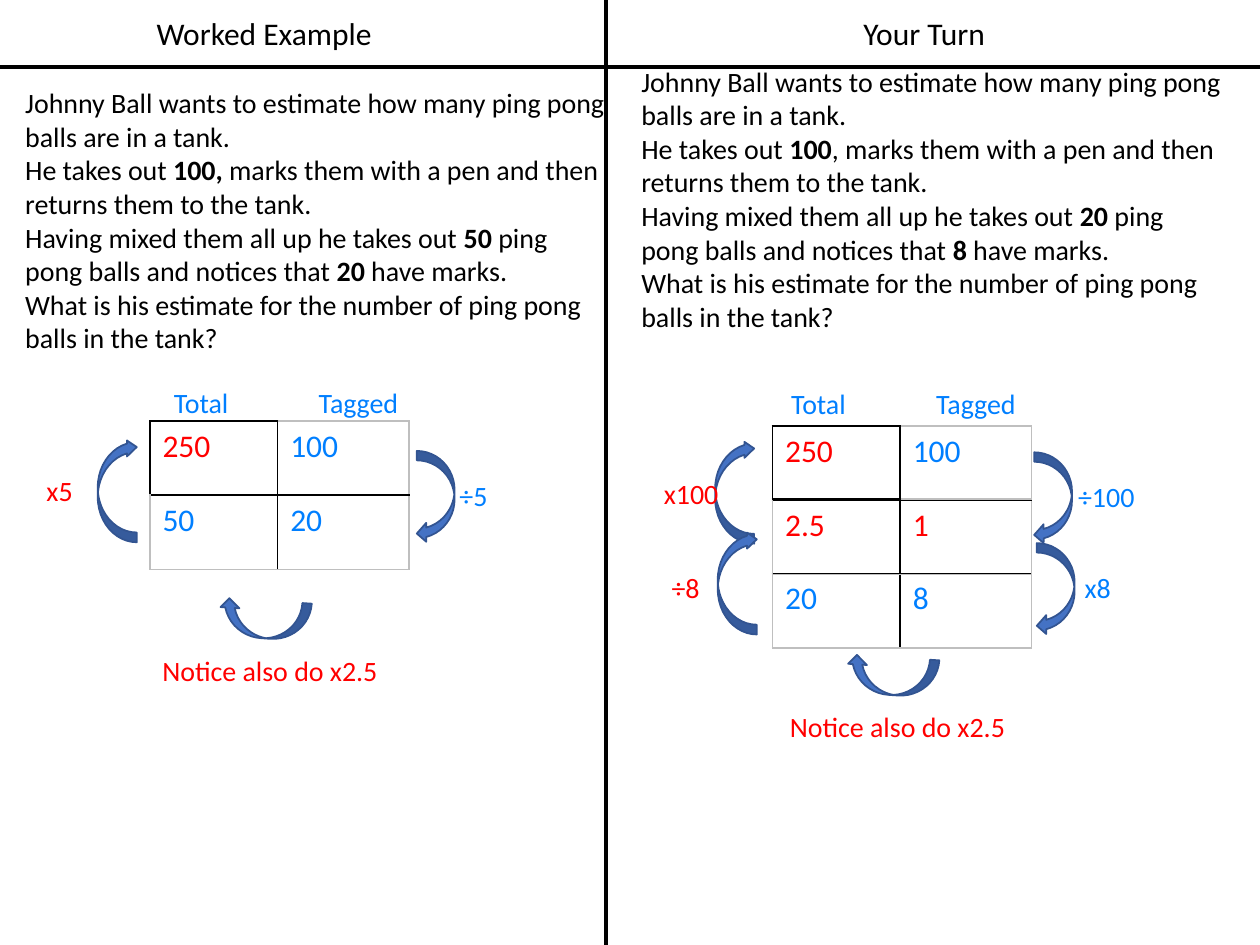
from lxml.etree import SubElement
from pptx import Presentation
from pptx.dml.color import RGBColor
from pptx.enum.shapes import MSO_CONNECTOR, MSO_SHAPE
from pptx.enum.text import MSO_ANCHOR, MSO_AUTO_SIZE, PP_ALIGN
from pptx.oxml import parse_xml
from pptx.oxml.ns import nsdecls, qn
from pptx.util import Pt

COLORS = {
    "ink": "000000", "answer": "FF0000", "given": "007FFF",
    "arrow": "4472C4", "arrow_edge": "325491", "outer_border": "BFBFBF",
}
WIDTH, HEIGHT = 720, 540
DIVIDER_X, RULE_Y = 346.3, 38.2


def rgb(name):
    return RGBColor.from_string(COLORS[name])


def style(run, size, color, bold=False):
    run.font.name = "Calibri"
    run.font.size = Pt(size)
    run.font.bold = bold
    run.font.color.rgb = rgb(color)


def place(shape, left, top, width, height):
    shape.left, shape.top = Pt(left), Pt(top)
    shape.width, shape.height = Pt(width), Pt(height)


def add_rule(slide, x1, y1, x2, y2):
    rule = slide.shapes.add_connector(
        MSO_CONNECTOR.STRAIGHT, Pt(x1), Pt(y1), Pt(x2), Pt(y2))
    rule.line.color.rgb = rgb("ink")
    rule.line.width = Pt(2.5)
    SubElement(rule._element.spPr, qn("a:effectLst"))


def add_label(slide, left, top, width, wording, color):
    label = slide.shapes.add_textbox(Pt(left), Pt(top), Pt(width), Pt(26.6))
    label.text_frame.word_wrap = True
    label.text_frame.text = wording
    style(label.text_frame.paragraphs[0].runs[0], 16, color)


def add_arrow(slide, preset, left, top, width, height, rotation=0):
    arrow = slide.shapes.add_shape(
        preset, Pt(left), Pt(top), Pt(width), Pt(height))
    arrow.rotation = rotation
    arrow.shadow.inherit = False
    arrow.fill.solid()
    arrow.fill.fore_color.rgb = rgb("arrow")
    arrow.line.color.rgb = rgb("arrow_edge")
    arrow.line.width = Pt(1)
    return arrow


def fill_placeholder(placeholder, box, paragraphs, size, align):
    """Each paragraph is a list of strings; every second one is bold."""
    place(placeholder, *box)
    frame = placeholder.text_frame
    frame.word_wrap = True
    frame.auto_size = MSO_AUTO_SIZE.NONE
    frame.vertical_anchor = MSO_ANCHOR.TOP
    for index, pieces in enumerate(paragraphs):
        paragraph = frame.add_paragraph() if index else frame.paragraphs[0]
        paragraph.alignment = align
        paragraph.space_before = Pt(0)
        properties = paragraph._p.get_or_add_pPr()
        properties.set("marL", "0")
        properties.set("indent", "0")
        SubElement(properties, qn("a:buNone"))
        for position, piece in enumerate(pieces):
            run = paragraph.add_run()
            run.text = piece
            style(run, size, "ink", bold=position % 2 == 1)


def add_question(slide, heading_id, heading, heading_left, left, top,
                 marked, sample, tagged):
    """Heading and word problem of one half."""
    fill_placeholder(slide.placeholders[heading_id],
                     (heading_left, 4.3, 139, 29), [[heading]], 18, PP_ALIGN.CENTER)
    problem = [
        ["Johnny Ball wants to estimate how many ping pong balls are in a tank."],
        ["He takes out ", *marked, " marks them with a pen and then returns them to the tank."]
        if len(marked) == 1 else
        ["He takes out ", marked[0], marked[1] + " marks them with a pen and then returns them to the tank."],
        ["Having mixed them all up he takes out ", sample,
         " ping pong balls and notices that ", tagged, " have marks."],
        ["What is his estimate for the number of ping pong balls in the tank?"],
    ]
    fill_placeholder(slide.placeholders[heading_id + 1],
                     (left, top, 346.3, 184.3), problem, 16, PP_ALIGN.LEFT)


def set_borders(cell, row, col):
    """Inner edges and the whole first cell are black, other edges grey."""
    first = row == col == 0
    inner = {"L": col == 1, "R": col == 0, "T": row == 1, "B": row == 0}
    properties = cell._tc.get_or_add_tcPr()
    for index, (side, is_inner) in enumerate(inner.items()):
        color = COLORS["ink" if first or is_inner else "outer_border"]
        properties.insert(index, parse_xml(
            f'<a:ln{side} {nsdecls("a")} w="12700"><a:solidFill>'
            f'<a:srgbClr val="{color}"/></a:solidFill></a:ln{side}>'))


def add_ratio_table(slide, left, top, rows):
    table = slide.shapes.add_table(
        2, 2, Pt(left), Pt(top), Pt(148), Pt(85)).table
    table.first_row = table.horz_banding = False
    for col, width in enumerate((73, 75)):
        table.columns[col].width = Pt(width)
    for row, entries in enumerate(rows):
        table.rows[row].height = Pt(42.5)
        for col, (value, color) in enumerate(entries):
            cell = table.cell(row, col)
            cell.fill.background()
            set_borders(cell, row, col)
            if value:
                cell.text_frame.text = value
                style(cell.text_frame.paragraphs[0].runs[0], 18, color)


def add_column_heads(slide, left, top):
    add_label(slide, left, top, 54, "Total", "given")
    add_label(slide, left + 82.8, top, 62.6, "Tagged", "given")


def add_step(slide, left, top, down, down_gap, up, up_shift):
    """Arrow down on the right, arrow back up on the left, with multipliers."""
    add_arrow(slide, MSO_SHAPE.CURVED_LEFT_ARROW, left + 146, top, 21.6, 52.6)
    add_label(slide, left + 146 + down_gap, top + 12.2, 62.6, down, "given")
    up_x, up_y = left - 54.7, top + 11.5
    back = add_arrow(slide, MSO_SHAPE.CURVED_DOWN_ARROW, up_x, up_y, 59, 22.3, 270)
    back.adjustments[1] = 0.41
    add_label(slide, up_x + up_shift[0], up_y + up_shift[1], 62.6, up, "answer")


def add_notice(slide, left, top):
    add_arrow(slide, MSO_SHAPE.CURVED_LEFT_ARROW, left + 54.7, top, 21.6, 52.6, 93.8)
    add_label(slide, left, top + 42, 172, "Notice also do x2.5", "answer")


def add_worked_example(slide, left, top):
    add_ratio_table(slide, left - 6.5, top + 23.8, [
        [("250", "answer"), ("100", "given")],
        [("50", "given"), ("20", "given")]])
    add_column_heads(slide, left, top)
    add_step(slide, left, top + 41, "÷5", 17.3, "x5", (-18, -2))
    add_notice(slide, left - 6.5, top + 111)


def add_your_turn(slide, left, top):
    # The lower table sits one row down, its empty row under the upper one
    add_ratio_table(slide, left - 3.6, top + 67.7, [
        [("", "given"), ("", "given")],
        [("20", "given"), ("8", "given")]])
    add_ratio_table(slide, left - 3.6, top + 25.9, [
        [("250", "answer"), ("100", "given")],
        [("2.5", "answer"), ("1", "answer")]])
    add_column_heads(slide, left, top)
    add_step(slide, left, top + 41, "÷100", 18, "x100", (-18, -1.4))
    add_step(slide, left + 1.5, top + 92.9, "x8", 20.2, "÷8", (-15.1, 0.7))
    add_notice(slide, left - 0.7, top + 142.6)


def main():
    deck = Presentation()
    deck.slide_width, deck.slide_height = Pt(WIDTH), Pt(HEIGHT)
    slide = deck.slides.add_slide(deck.slide_layouts[4])
    title = slide.shapes.title._element
    title.getparent().remove(title)

    # Questions
    add_question(slide, 1, "Worked Example", 81.4, 7.2, 45.4, ["100,"], "50", "20")
    add_question(slide, 3, "Your Turn", 458.6, 359.3, 33.1, ["100", ","], "20", "8")

    # Dividers
    add_rule(slide, DIVIDER_X, 0, DIVIDER_X, HEIGHT)
    add_rule(slide, 0, RULE_Y, WIDTH, RULE_Y)

    # Ratio diagrams
    add_worked_example(slide, 92.2, 216.7)
    add_your_turn(slide, 445, 217.5)

    deck.save("out.pptx")


if __name__ == "__main__":
    main()
